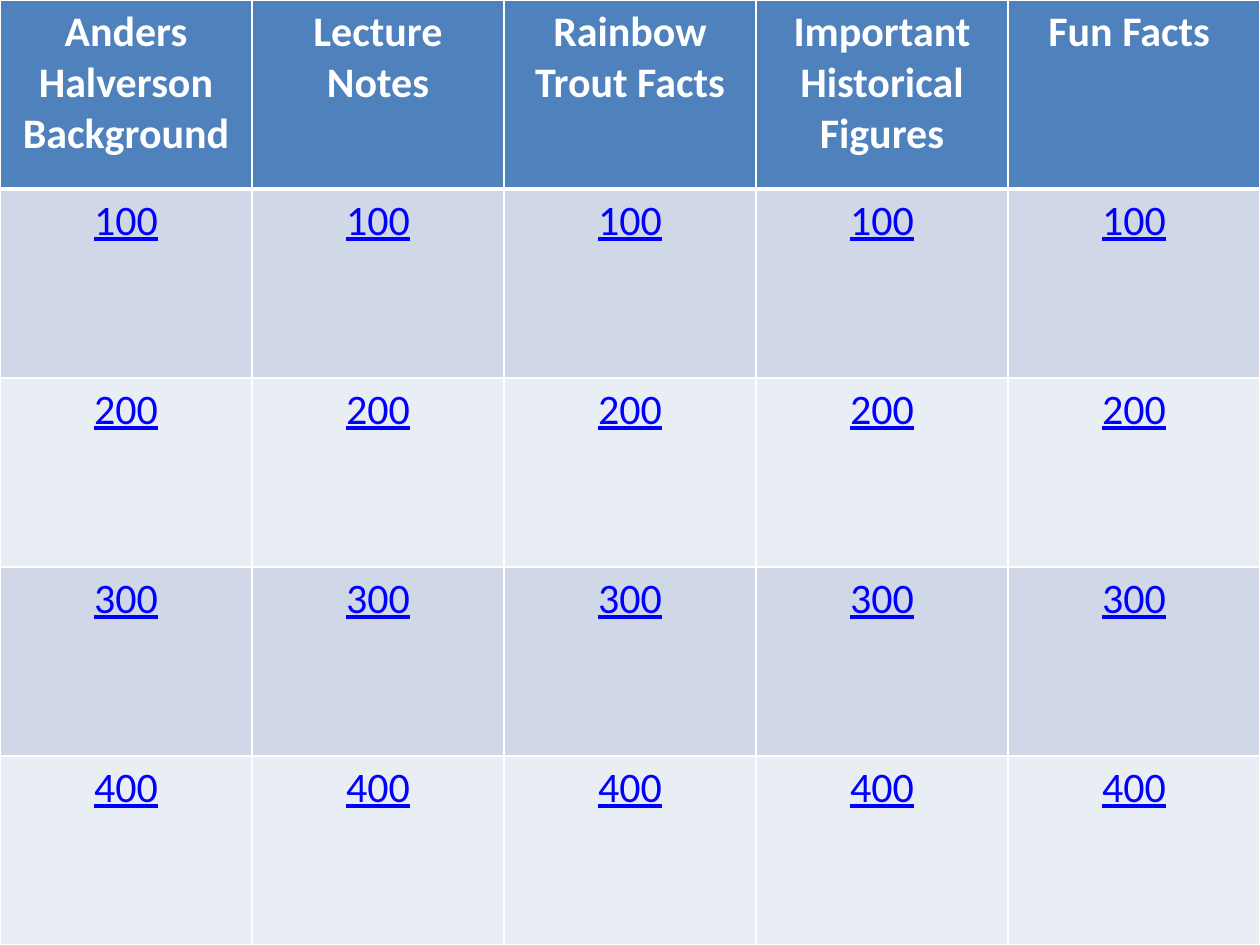
"""Build a quiz board slide with five categories and four point levels."""
from dataclasses import dataclass

from lxml.etree import SubElement
from pptx import Presentation
from pptx.dml.color import RGBColor
from pptx.enum.text import PP_ALIGN
from pptx.oxml.ns import qn
from pptx.util import Inches, Pt


@dataclass(frozen=True)
class Theme:
    """Colours, type and line widths of the board."""
    font: str = "Calibri"
    size: int = 24
    header_fill: str = "4F81BD"
    band_fills: tuple = ("D0D8E8", "E9EDF4")
    header_text: str = "FFFFFF"
    points_text: str = "0000FF"
    border: str = "FFFFFF"
    thin: int = 1
    thick: int = 3


THEME = Theme()
WIDTH, HEIGHT = 10, 7.5
CATEGORIES = (
    "Anders Halverson Background",
    "Lecture Notes",
    "Rainbow Trout Facts",
    "Important Historical Figures",
    "Fun Facts ",
)
POINTS = (100, 200, 300, 400)


def set_borders(cell, top, bottom):
    """Draw the four cell borders, with the given top and bottom widths."""
    properties = cell._tc.get_or_add_tcPr()
    widths = {"L": THEME.thin, "R": THEME.thin, "T": top, "B": bottom}
    for side, width in widths.items():
        line = SubElement(properties, qn(f"a:ln{side}"), w=str(Pt(width)))
        fill = SubElement(line, qn("a:solidFill"))
        SubElement(fill, qn("a:srgbClr"), val=THEME.border)


def fill_cell(cell, text, fill, color, is_header=False):
    """Write centred text in a cell and colour its background."""
    cell.fill.solid()
    cell.fill.fore_color.rgb = RGBColor.from_string(fill)
    cell.text = text
    paragraph = cell.text_frame.paragraphs[0]
    paragraph.alignment = PP_ALIGN.CENTER
    font = paragraph.runs[0].font
    font.name = THEME.font
    font.size = Pt(THEME.size)
    font.bold = is_header
    font.underline = not is_header
    font.color.rgb = RGBColor.from_string(color)


def add_board(slide):
    """Add the full-slide table of categories and points."""
    rows, columns = len(POINTS) + 1, len(CATEGORIES)
    table = slide.shapes.add_table(
        rows, columns, 0, 0, Inches(WIDTH), Inches(HEIGHT)
    ).table
    for column, category in enumerate(CATEGORIES):
        header = table.cell(0, column)
        set_borders(header, THEME.thin, THEME.thick)
        fill_cell(header, category, THEME.header_fill, THEME.header_text, True)
        for row, points in enumerate(POINTS, start=1):
            cell = table.cell(row, column)
            set_borders(cell, THEME.thick if row == 1 else THEME.thin, THEME.thin)
            band = THEME.band_fills[(row - 1) % 2]
            fill_cell(cell, str(points), band, THEME.points_text)


def main():
    """Create and save the presentation."""
    presentation = Presentation()
    presentation.slide_width = Inches(WIDTH)
    presentation.slide_height = Inches(HEIGHT)
    slide = presentation.slides.add_slide(presentation.slide_layouts[6])
    add_board(slide)
    presentation.save("out.pptx")


if __name__ == "__main__":
    main()
